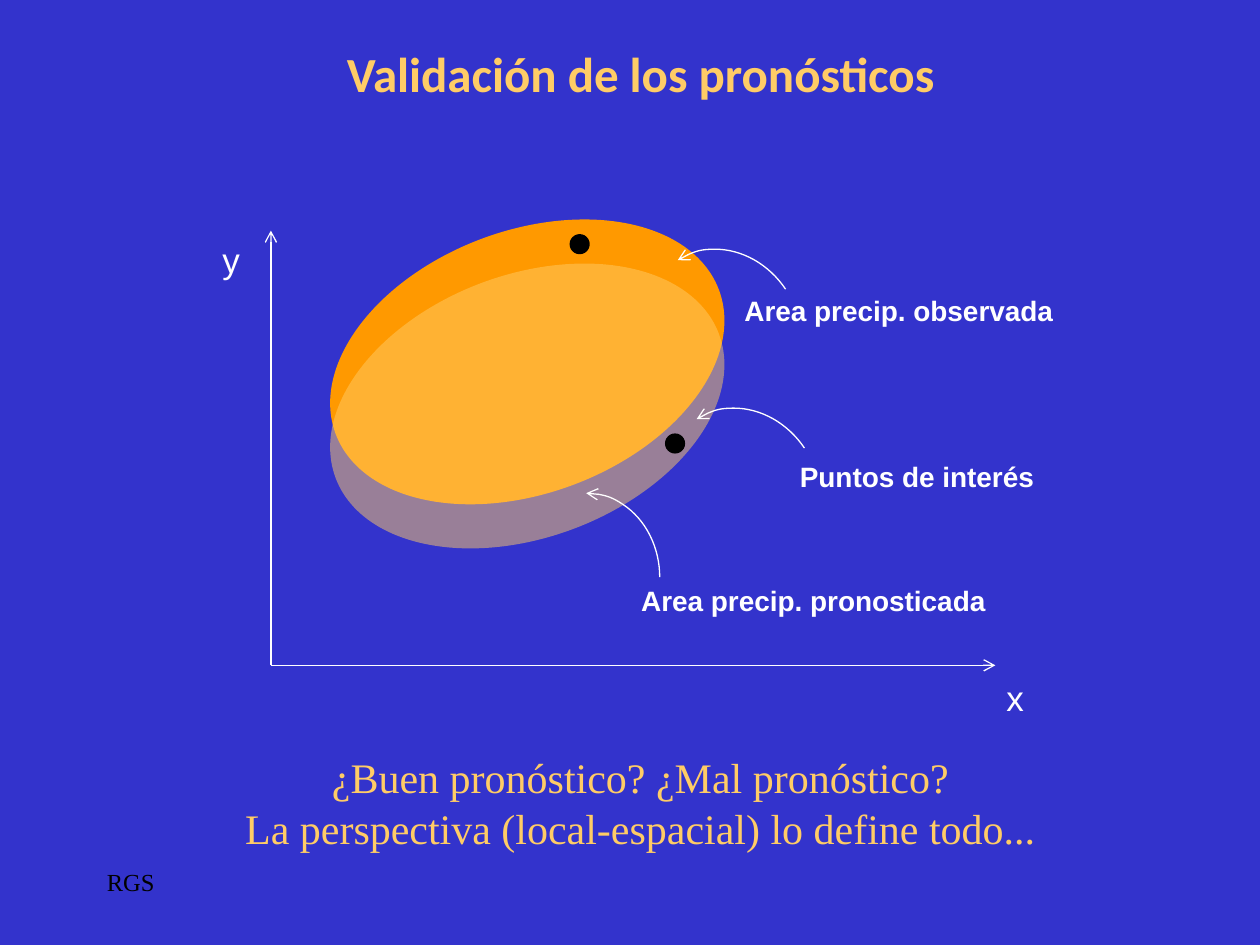
import pptx
import pptx.util
import pptx.dml.color
import pptx.enum.shapes
import pptx.enum.text
import pptx.oxml
import pptx.oxml.ns

Pt = pptx.util.Pt
RGBColor = pptx.dml.color.RGBColor
Shape = pptx.enum.shapes.MSO_SHAPE
Align = pptx.enum.text.PP_ALIGN
Anchor = pptx.enum.text.MSO_ANCHOR
AutoSize = pptx.enum.text.MSO_AUTO_SIZE

BLUE = RGBColor(0x33, 0x33, 0xCC)
GOLD = RGBColor(0xFF, 0xCC, 0x66)
ORANGE = RGBColor(0xFF, 0x99, 0x00)
WHITE = RGBColor(0xFF, 0xFF, 0xFF)
BLACK = RGBColor(0x00, 0x00, 0x00)

AREA_ROTATION = 339.4
DOT_SIZE = 11.5
ARC_RADII = (42, 48)


def add_child(parent, tag, **attributes):
    child = pptx.oxml.parse_xml(f"<a:{tag} {pptx.oxml.ns.nsdecls('a')}/>")
    for key, value in attributes.items():
        child.set(key, value)
    parent.append(child)


def place(element, left, top, width, height):
    element.left, element.top = Pt(left), Pt(top)
    element.width, element.height = Pt(width), Pt(height)


def write_lines(frame, lines, font, size, color, bold=False, align=Align.LEFT):
    frame.word_wrap = True
    frame.auto_size = AutoSize.NONE
    frame.vertical_anchor = Anchor.TOP
    for index, line in enumerate(lines):
        paragraph = frame.paragraphs[0] if index == 0 else frame.add_paragraph()
        paragraph.alignment = align
        paragraph.space_before = Pt(0)
        run = paragraph.add_run()
        run.text = line
        run.font.name = font
        run.font.size = Pt(size)
        run.font.bold = bold
        run.font.color.rgb = color


def add_label(slide, text, box, font="Arial", size=16, color=WHITE, bold=False):
    label = slide.shapes.add_textbox(*map(Pt, box))
    write_lines(label.text_frame, [text], font, size, color, bold)


def fill_title(slide, text):
    title = slide.shapes.title
    place(title, 120, 21, 492, 41)
    write_lines(title.text_frame, [text], "Calibri", 28, GOLD, True, Align.CENTER)


def fill_question(slide, lines):
    question = slide.placeholders[1]
    place(question, 120, 426, 492, 65)
    write_lines(question.text_frame, lines, "Times New Roman", 24, GOLD,
                align=Align.CENTER)
    for paragraph in question.text_frame.paragraphs:
        properties = paragraph._p.get_or_add_pPr()
        properties.set("marL", "0")
        properties.set("indent", "0")
        add_child(properties, "buNone")


def add_ellipse(slide, box, color, rotation=0, opacity=None):
    ellipse = slide.shapes.add_shape(Shape.OVAL, *map(Pt, box))
    ellipse.shadow.inherit = False
    ellipse.rotation = rotation
    ellipse.fill.solid()
    ellipse.fill.fore_color.rgb = color
    ellipse.line.fill.background()
    if opacity is not None:
        solid = ellipse._element.spPr.find(pptx.oxml.ns.qn("a:solidFill"))
        add_child(solid[0], "alpha", val=str(opacity * 1000))


def style_arrow(arrow, end):
    arrow.line.color.rgb = WHITE
    arrow.line.width = Pt(0.75)
    add_child(arrow.line._get_or_add_ln(), end, type="arrow")


def add_pointer(slide, center_x, center_y, rotation=0):
    radius_x, radius_y = ARC_RADII
    pointer = slide.shapes.add_shape(
        Shape.ARC, Pt(center_x - radius_x), Pt(center_y - radius_y),
        Pt(2 * radius_x), Pt(2 * radius_y))
    pointer.shadow.inherit = False
    pointer.rotation = rotation
    pointer.fill.background()
    style_arrow(pointer, "headEnd")


def add_axis(axes, start, finish, end):
    axis = axes.shapes.add_connector(
        pptx.enum.shapes.MSO_CONNECTOR.STRAIGHT, *map(Pt, start + finish))
    style_arrow(axis, end)
    add_child(axis._element.spPr, "effectLst")


def main():
    presentation = pptx.Presentation()
    presentation.slide_width, presentation.slide_height = Pt(720), Pt(540)
    slide = presentation.slides.add_slide(presentation.slide_layouts[1])
    slide.background.fill.solid()
    slide.background.fill.fore_color.rgb = BLUE

    fill_title(slide, "Validación de los pronósticos")
    fill_question(slide, ["¿Buen pronóstico? ¿Mal pronóstico?",
                          "La perspectiva (local-espacial) lo define todo..."])
    add_label(slide, "RGS", (54, 492, 150, 36), "Times New Roman", 14, BLACK)

    add_ellipse(slide, (184.3, 131.8, 234, 150), ORANGE, AREA_ROTATION)
    add_ellipse(slide, (184.3, 157, 234, 150), GOLD, AREA_ROTATION, 50)
    for left, top in ((325.5, 133.8), (380, 247.7)):
        add_ellipse(slide, (left, top, DOT_SIZE, DOT_SIZE), BLACK)

    axes = slide.shapes.add_group_shape()
    origin = (154.8, 380.2)
    add_axis(axes, (154.8, 131.8), origin, "headEnd")
    add_axis(axes, origin, (568.8, 380.2), "tailEnd")
    add_label(slide, "x", (568, 383, 28, 31), size=20)
    add_label(slide, "y", (120, 133, 28, 31), size=20)

    add_pointer(slide, 335, 329.8)
    add_pointer(slide, 414, 188.6, 326.2)
    add_pointer(slide, 424.8, 279.4, 326.2)
    add_label(slide, "Area precip. pronosticada", (359.3, 330, 253, 27), bold=True)
    add_label(slide, "Area precip. observada", (418.3, 164.2, 221, 27), bold=True)
    add_label(slide, "Puntos de interés", (450, 259.2, 221, 27), bold=True)

    presentation.save("out.pptx")


if __name__ == "__main__":
    main()
